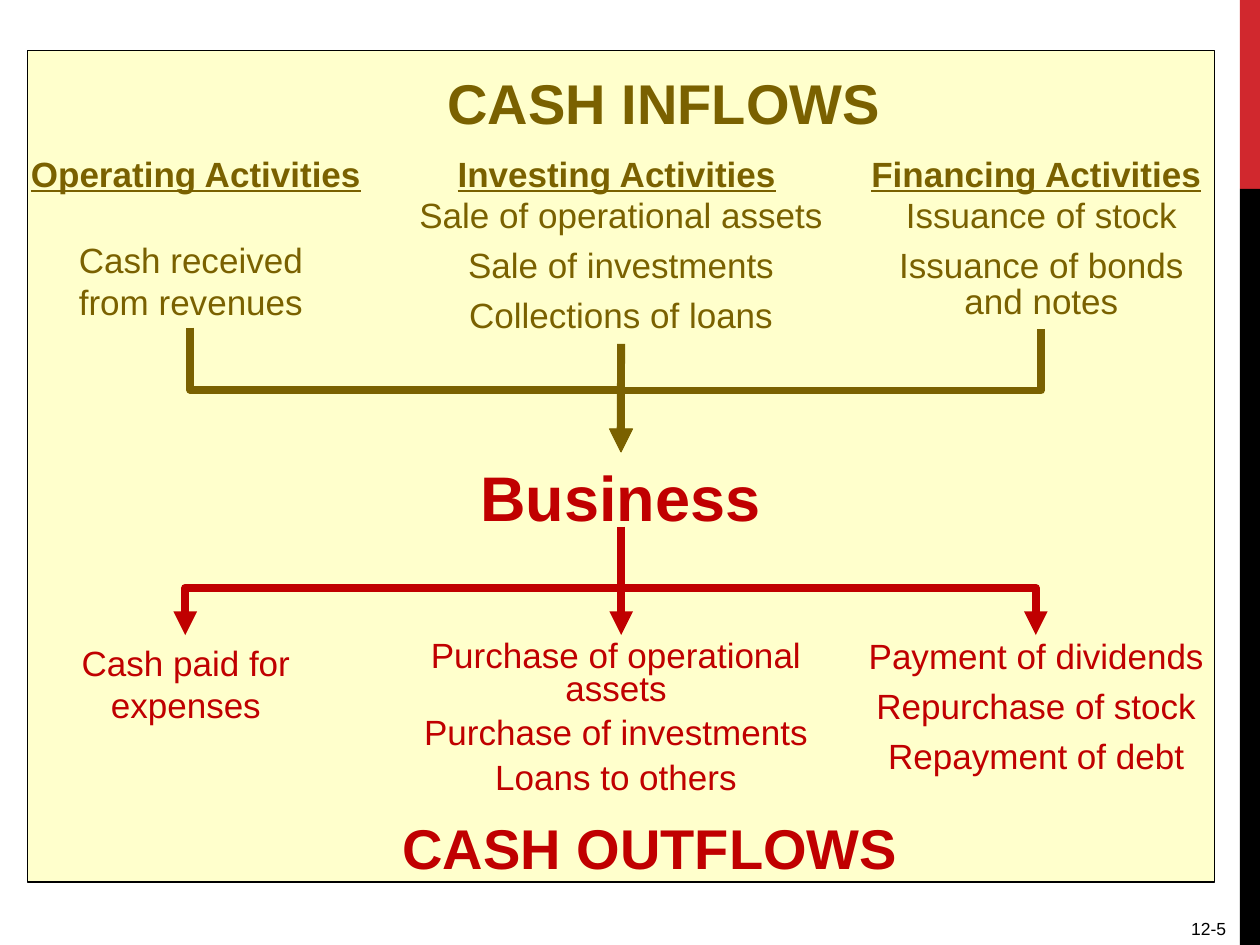
from dataclasses import dataclass

from lxml import etree
from pptx import Presentation, util as u
from pptx.dml.color import RGBColor
from pptx.enum import shapes, text
from pptx.oxml.ns import qn

# Grid: 100 columns by 75 rows of square cells
COLUMNS, ROWS = 100, 75
CELL = u.Inches(0.1)


@dataclass(frozen=True)
class Theme:
    font: str = "Arial"
    inflow: str = "7A6100"
    outflow: str = "C00000"
    panel: str = "FFFFCC"
    accent: str = "D1282E"
    ink: str = "000000"
    body: int = 20
    heading: int = 32
    hub: int = 36
    number: int = 10
    arrow: float = 4.5


THEME = Theme()


@dataclass(frozen=True)
class Label:
    lines: tuple[str, ...]
    column: float
    row: float
    width: float
    height: float
    color: str
    size: int = THEME.body
    bold: bool = False
    underline: bool = False
    spacing: float = 1.0
    gap: int = 0
    align: text.PP_ALIGN = text.PP_ALIGN.CENTER
    anchor: text.MSO_ANCHOR = text.MSO_ANCHOR.TOP


@dataclass(frozen=True)
class Arrow:
    start: tuple[float, float]
    end: tuple[float, float]
    color: str


def cells(*counts: float) -> list[int]:
    return [round(count * CELL) for count in counts]


def rgb(color: str) -> RGBColor:
    return RGBColor.from_string(color)


def draw_block(slide, column, row, width, height, fill: str, border: str | None = None):
    block = slide.shapes.add_shape(shapes.MSO_SHAPE.RECTANGLE,
                                   *cells(column, row, width, height))
    block.shadow.inherit = False
    block.fill.solid()
    block.fill.fore_color.rgb = rgb(fill)
    if border:
        block.line.color.rgb = rgb(border)
        block.line.width = u.Pt(0.75)
    else:
        block.line.fill.background()


def write_label(box, label: Label):
    box.left, box.top, box.width, box.height = cells(
        label.column, label.row, label.width, label.height)
    frame = box.text_frame
    frame.text = "\n".join(label.lines)
    frame.word_wrap = True
    frame.auto_size = text.MSO_AUTO_SIZE.NONE
    frame.vertical_anchor = label.anchor
    for index, paragraph in enumerate(frame.paragraphs):
        paragraph.alignment = label.align
        paragraph.line_spacing = label.spacing
        paragraph.space_before = u.Pt(label.gap if index else 0)
        for run in paragraph.runs:
            run.font.name = THEME.font
            run.font.size = u.Pt(label.size)
            run.font.bold = label.bold
            run.font.underline = label.underline
            run.font.color.rgb = rgb(label.color)


def draw_label(slide, label: Label):
    box = slide.shapes.add_textbox(0, 0, CELL, CELL)
    write_label(box, label)
    return box


def style_arrow(connector, color: str):
    connector.line.color.rgb = rgb(color)
    connector.line.width = u.Pt(THEME.arrow)
    properties = connector.line._get_or_add_ln()
    etree.SubElement(properties, qn("a:tailEnd"), type="triangle")
    etree.SubElement(connector._element.spPr, qn("a:effectLst"))


def draw_straight(slide, arrow: Arrow):
    connector = slide.shapes.add_connector(
        shapes.MSO_CONNECTOR.STRAIGHT, *cells(*arrow.start, *arrow.end))
    style_arrow(connector, arrow.color)
    return connector


def draw_elbow(slide, arrow: Arrow):
    """Down, across and down: a quarter-turned elbow about the same centre."""
    (x1, y1), (x2, y2) = arrow.start, arrow.end
    middle_x, middle_y = (x1 + x2) / 2, (y1 + y2) / 2
    rightward = x2 > x1
    half_width = (y2 - y1) / 2 * (-1 if rightward else 1)
    half_height = abs(x2 - x1) / 2
    connector = slide.shapes.add_connector(
        shapes.MSO_CONNECTOR.ELBOW,
        *cells(middle_x - half_width, middle_y - half_height,
               middle_x + half_width, middle_y + half_height))
    turn = 270 if rightward else 90
    connector._element.spPr.find(qn("a:xfrm")).set("rot", str(turn * 60000))
    style_arrow(connector, arrow.color)


# Content
IN, OUT = THEME.inflow, THEME.outflow
INFLOW_TITLE = Label(("CASH INFLOWS",), 34.3, 4.9, 36.8, 6.4, IN, THEME.heading, True)
OUTFLOW_TITLE = Label(("CASH OUTFLOWS",), 30.3, 64.1, 42.6, 6.4, OUT, THEME.heading, True)
BUSINESS = Label(("Business",), 33.8, 35.9, 30.9, 7, OUT, THEME.hub, True)
PAGE_NUMBER = Label(("12-5",), 80, 71.9, 18.3, 3.1, THEME.ink, THEME.number,
                    align=text.PP_ALIGN.RIGHT, anchor=text.MSO_ANCHOR.BOTTOM)
ACTIVITIES = {"Operating": 0.9, "Investing": 34.3, "Financing": 67.6}
INVESTING_INFLOWS = Label(
    ("Sale of operational assets", "Sale of investments", "Collections of loans"),
    30.5, 15.4, 37.6, 11.9, IN, spacing=0.85, gap=8)
FLOWS = (
    Label(("Cash received from revenues",), 2.2, 18.4, 25.9, 7.6, IN),
    Label(("Issuance of stock", "Issuance of bonds and notes"),
          69.7, 15.4, 25.9, 10.7, IN, spacing=0.85, gap=8),
    Label(("Cash paid for expenses",), 1.8, 50.4, 25.9, 7.6, OUT),
    Label(("Purchase of operational assets", "Purchase of investments", "Loans to others"),
          30.1, 50.4, 37.6, 13.3, OUT, spacing=0.8, gap=6),
    Label(("Payment of dividends", "Repurchase of stock", "Repayment of debt"),
          67.6, 50.4, 29.3, 11.9, OUT, spacing=0.85, gap=8),
)
AXIS, HUB_TOP, HUB_BOTTOM, OUTFLOW_TOP = 49.3, 35.9, 42.9, 50.4
ELBOWS = (
    Arrow((15.1, 26), (AXIS, HUB_TOP), IN),
    Arrow((82.6, 26.1), (AXIS, HUB_TOP), IN),
    Arrow((AXIS, HUB_BOTTOM), (14.7, OUTFLOW_TOP), OUT),
    Arrow((AXIS, HUB_BOTTOM), (82.2, OUTFLOW_TOP), OUT),
)


def main():
    deck = Presentation()
    deck.slide_width, deck.slide_height = cells(COLUMNS, ROWS)
    slide = deck.slides.add_slide(deck.slide_layouts[5])

    # Side bar and panel
    draw_block(slide, 98.4, 0, 1.6, 15, THEME.accent)
    draw_block(slide, 98.4, 15, 1.6, 60, THEME.ink)
    draw_block(slide, 2.2, 4, 94.2, 66, THEME.panel, THEME.ink)

    # Title, brought in front of the panel
    title = slide.shapes.title
    write_label(title, INFLOW_TITLE)
    slide.shapes._spTree.append(title._element)

    # Headings and lists
    for activity, column in ACTIVITIES.items():
        draw_label(slide, Label((f"{activity} Activities",), column, 11.6, 29.3, 4.3,
                                IN, bold=True, underline=True))
    for label in (*FLOWS, OUTFLOW_TITLE, PAGE_NUMBER):
        draw_label(slide, label)
    investing = draw_label(slide, INVESTING_INFLOWS)
    business = draw_label(slide, BUSINESS)

    # Arrows into and out of the business
    for arrow in ELBOWS:
        draw_elbow(slide, arrow)
    inflow = draw_straight(slide, Arrow((AXIS, 27.3), (AXIS, HUB_TOP), IN))
    inflow.begin_connect(investing, 2)
    inflow.end_connect(business, 0)
    draw_straight(slide, Arrow((AXIS, 41.8), (AXIS, OUTFLOW_TOP), OUT))

    deck.save("out.pptx")


if __name__ == "__main__":
    main()
